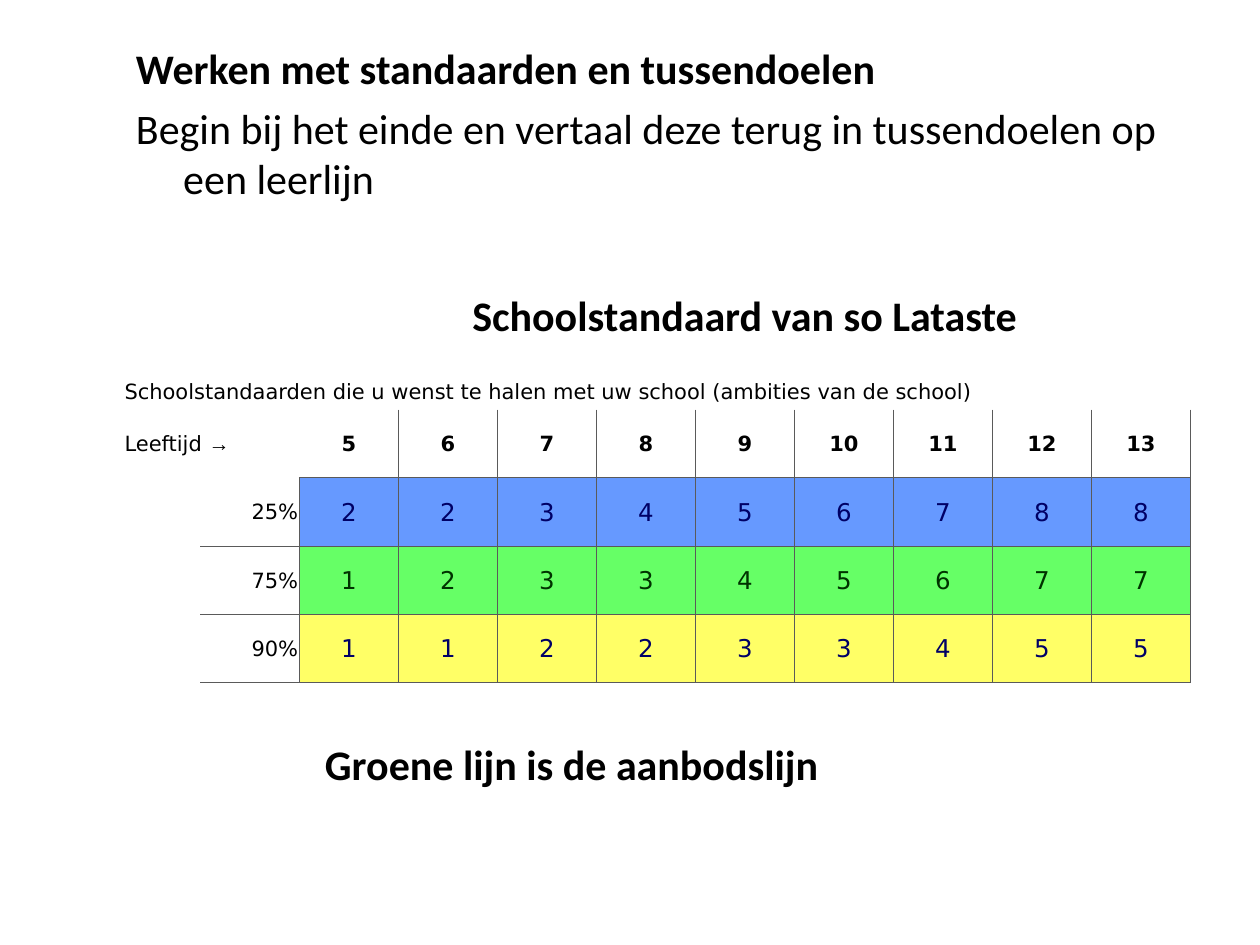
from lxml.etree import SubElement
from pptx import Presentation
from pptx.dml.color import RGBColor
from pptx.enum.text import MSO_ANCHOR, MSO_AUTO_SIZE, PP_ALIGN
from pptx.oxml.ns import qn
from pptx.util import Pt

COLORS = {"black": "000000", "white": "FFFFFF", "line": "5A5A5A",
          "navy": "000066", "forest": "003300",
          "blue": "6699FF", "green": "66FF66", "yellow": "FFFF66"}
HEAD = {"name": "Calibri", "size": Pt(24), "bold": True}
BODY = {**HEAD, "bold": False}
LABEL = {"name": "DejaVu Sans", "size": Pt(12), "bold": False}
AGE = {**LABEL, "bold": True}
ARROW = {**AGE, "name": "Arial"}
SCORE = {**LABEL, "size": Pt(14)}
CELL = {"margin_left": Pt(0.7), "margin_right": Pt(0.7), "margin_top": Pt(0.7),
        "margin_bottom": 0, "vertical_anchor": MSO_ANCHOR.MIDDLE}
FRAME = {"word_wrap": True, "auto_size": MSO_AUTO_SIZE.NONE,
         "vertical_anchor": MSO_ANCHOR.TOP}
LOOSE = {"word_wrap": False, "auto_size": MSO_AUTO_SIZE.SHAPE_TO_FIT_TEXT}
PLAIN = "{2D5ABB26-0587-4C30-8999-92F81FD0307C}"
AGES = range(5, 14)
GOALS = [("25%", "blue", "navy", [2, 2, 3, 4, 5, 6, 7, 8, 8]),
         ("75%", "green", "forest", [1, 2, 3, 3, 4, 5, 6, 7, 7]),
         ("90%", "yellow", "navy", [1, 1, 2, 2, 3, 3, 4, 5, 5])]


def apply(item, values):
    """Set each attribute in values on the item."""
    for key, value in values.items():
        setattr(item, key, value)


class Deck:
    """Holds the style and the current slide."""

    def __init__(self):
        """Open a slide with a title and a body."""
        self.file = Presentation()
        apply(self.file, {"slide_width": Pt(720), "slide_height": Pt(540)})
        self.slide = self.file.slides.add_slide(self.file.slide_layouts[1])

    def words(self, para, text, style, color="black"):
        """Add a formatted run to a paragraph."""
        run = para.add_run()
        run.text = text
        apply(run.font, style)
        run.font.color.rgb = RGBColor.from_string(COLORS[color])

    def holder(self, index, text, style, box):
        """Fill and move a placeholder with a hanging indent."""
        shape = self.slide.placeholders[index]
        apply(shape, dict(zip(("left", "top", "width", "height"), map(Pt, box))))
        apply(shape.text_frame, FRAME)
        para = shape.text_frame.paragraphs[0]
        apply(para, {"alignment": PP_ALIGN.LEFT, "space_before": Pt(0)})
        props = para._p.get_or_add_pPr()
        props.set("marL", str(Pt(27)))
        props.set("indent", str(Pt(-27)))
        SubElement(props, qn("a:buNone"))
        self.words(para, text, style)

    def label(self, text, box):
        """Add a bold heading that does not wrap."""
        frame = self.slide.shapes.add_textbox(*map(Pt, box)).text_frame
        apply(frame, LOOSE)
        self.words(frame.paragraphs[0], text, HEAD)

    def cell(self, cell, text="", style=LABEL, align=PP_ALIGN.LEFT,
             fill="white", color="black", sides=""):
        """Format one table cell and draw the given sides."""
        apply(cell, CELL)
        para = cell.text_frame.paragraphs[0]
        para.alignment = align
        if text:
            self.words(para, text, style, color)
        props = cell._tc.get_or_add_tcPr()
        for side in sides:
            line = SubElement(props, qn(f"a:ln{side}"), w=str(Pt(0.5)))
            solid = SubElement(line, qn("a:solidFill"))
            SubElement(solid, qn("a:srgbClr"), val=COLORS["line"])
        cell.fill.solid()
        cell.fill.fore_color.rgb = RGBColor.from_string(COLORS[fill])

    def grid(self, left, top, widths, heights):
        """Add an unstyled table with the given columns and rows."""
        table = self.slide.shapes.add_table(
            len(heights), len(widths), Pt(left), Pt(top),
            Pt(sum(widths)), Pt(sum(heights))).table
        apply(table, {"first_row": False, "horz_banding": False})
        table._tbl.tblPr.find(qn("a:tableStyleId")).text = PLAIN
        for col, width in zip(table.columns, widths):
            col.width = Pt(width)
        for row, height in zip(table.rows, heights):
            row.height = Pt(height)
        return table

    def goals(self):
        """Fill the table of standards by age."""
        table = self.grid(70.5, 213.8, [44] + [56.6] * 10, [20.3] + [39] * 4)
        at = table.cell
        at(0, 0).merge(at(0, 10))
        at(1, 0).merge(at(1, 1))
        self.cell(at(0, 0), "Schoolstandaarden die u wenst te halen met uw "
                  "school (ambities van de school)")
        self.cell(at(1, 0), "Leeftijd ")
        self.words(at(1, 0).text_frame.paragraphs[0], "→", ARROW)
        for col, age in enumerate(AGES, 2):
            self.cell(at(1, col), str(age), AGE, PP_ALIGN.CENTER,
                      sides="LRB" if col > 2 else "RB")
        for row, (share, fill, color, scores) in enumerate(GOALS, 2):
            self.cell(at(row, 0))
            self.cell(at(row, 1), share, align=PP_ALIGN.RIGHT,
                      sides="RTB" if row > 2 else "RB")
            for col, score in enumerate(scores, 2):
                self.cell(at(row, col), str(score), SCORE, PP_ALIGN.CENTER,
                          fill, color, "LRTB")


def main():
    """Build and save the slide."""
    deck = Deck()
    deck.holder(0, "Werken met standaarden en tussendoelen", HEAD,
                (70.5, 20.9, 610.5, 34))
    deck.holder(1, "Begin bij het einde en vertaal deze terug in tussendoelen "
                "op een leerlijn", BODY, (70.5, 55, 610.5, 66))
    deck.label("Schoolstandaard van so Lataste", (262.8, 162, 329, 36))
    deck.goals()
    deck.label("Groene lijn is de aanbodslijn", (178.6, 418.3, 298.8, 36))
    deck.file.save("out.pptx")


if __name__ == "__main__":
    main()
